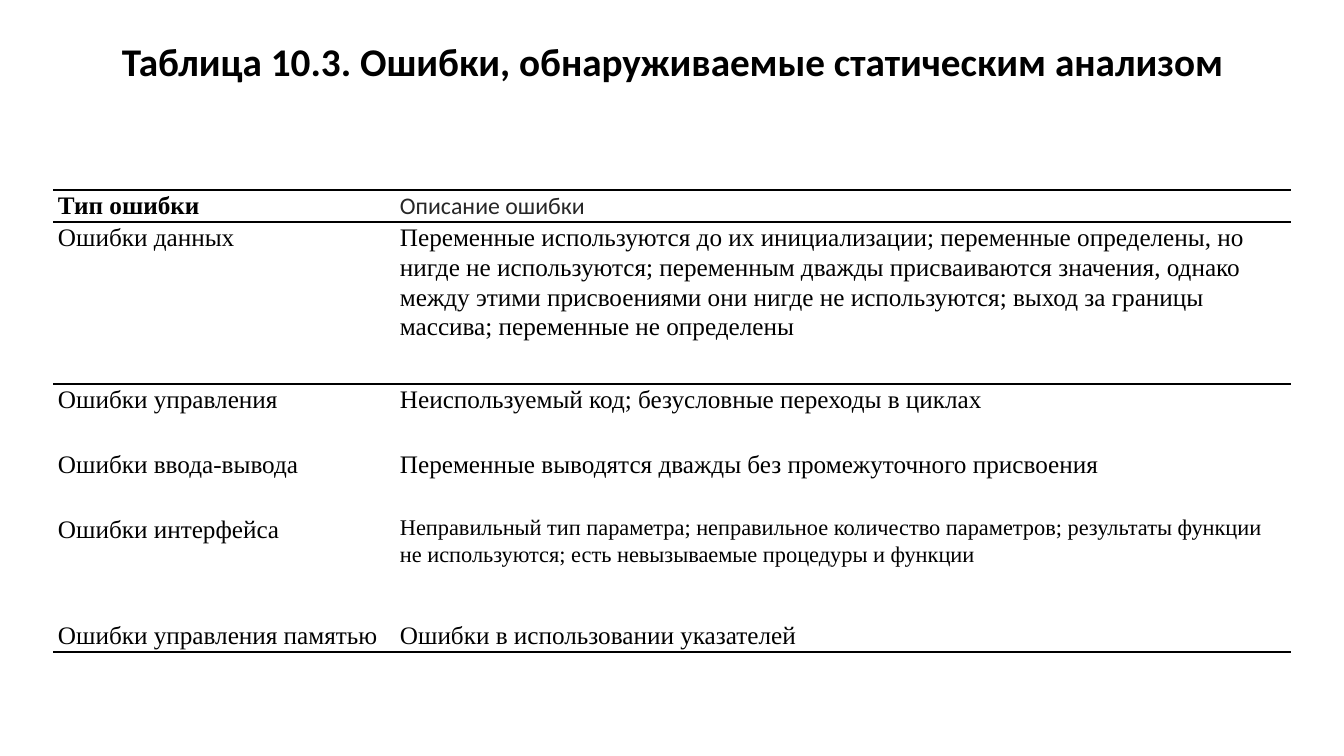
from lxml import etree
from pptx import Presentation
from pptx.dml.color import RGBColor
from pptx.enum.text import MSO_ANCHOR, MSO_AUTO_SIZE, PP_ALIGN
from pptx.oxml.ns import qn
from pptx.util import Pt

PX = 9144000 / 1008
TOP = MSO_ANCHOR.TOP
FIXED = MSO_AUTO_SIZE.NONE
CENTER, LEFT, JUSTIFY = PP_ALIGN.CENTER, PP_ALIGN.LEFT, PP_ALIGN.JUSTIFY
COLORS = {"ink": "000000", "gray": "272727", "paper": "FFFFFF"}
SERIF, SANS = "Times New Roman", "Calibri"
PLAIN = "{2D5ABB26-0587-4C30-8999-92F81FD0307C}"


def px(n):
    return round(n * PX)


def write(par, text, size, font=SERIF, bold=False, color="ink"):
    run = par.add_run()
    run.text = text
    run.font.size = Pt(size)
    run.font.name = font
    run.font.bold = bold
    run.font.color.rgb = RGBColor.from_string(COLORS[color])


prs = Presentation()
prs.slide_width, prs.slide_height = px(1344), px(756)
slide = prs.slides.add_slide(prs.slide_layouts[5])

title = slide.shapes.title
title.left, title.top, title.width, title.height = px(93), px(41), px(1159), px(48)
frame = title.text_frame
frame.auto_size = FIXED
frame.word_wrap = True
frame.vertical_anchor = TOP
par = frame.paragraphs[0]
par.alignment = CENTER
par.line_spacing = 0.8
write(par, "Таблица 10.3. Ошибки, обнаруживаемые статическим анализом", 28, SANS, True)

rows = [
    ("Тип ошибки", "Описание ошибки"),
    ("Ошибки данных",
     "Переменные используются до их инициализации; переменные определены, но "
     "нигде не используются; переменным дважды присваиваются значения, однако "
     "между этими присвоениями они нигде не используются; выход за границы "
     "массива; переменные не определены"),
    ("Ошибки управления", "Неиспользуемый код; безусловные переходы в циклах"),
    ("Ошибки ввода-вывода",
     "Переменные выводятся дважды без промежуточного присвоения"),
    ("Ошибки интерфейса",
     "Неправильный тип параметра; неправильное количество параметров; результаты "
     "функции не используются; есть невызываемые процедуры и функции"),
    ("Ошибки управления памятью", "Ошибки в использовании указателей"),
]
widths = [342, 896]
heights = [32, 162, 65, 65, 106, 32]
styles = {
    (0, 0): {"size": 18, "bold": True},
    (0, 1): {"size": 17, "font": SANS, "color": "gray"},
    (4, 1): {"size": 16},
}
rules = {0: ("lnT", "lnB"), 1: ("lnT",), len(rows) - 1: ("lnB",)}

table = slide.shapes.add_table(
    len(rows), len(widths), px(53), px(190), px(sum(widths)), px(sum(heights))).table
table.first_row = table.horz_banding = False
table._tbl.tblPr.find(qn("a:tableStyleId")).text = PLAIN
for col, width in zip(table.columns, widths):
    col.width = px(width)

for r, texts in enumerate(rows):
    table.rows[r].height = px(heights[r])
    for c, text in enumerate(texts):
        cell = table.cell(r, c)
        cell.margin_left = cell.margin_right = px(5)
        cell.margin_top = cell.margin_bottom = 0
        cell.vertical_anchor = TOP
        par = cell.text_frame.paragraphs[0]
        par.alignment = JUSTIFY if (r, c) == (0, 0) else LEFT
        par.line_spacing = 1.07
        if (r, c) == (0, 1):
            par.space_before = Pt(2)
        write(par, text, **styles.get((r, c), {"size": 18}))

        props = cell._tc.get_or_add_tcPr()
        for side in rules.get(r, ()):
            line = etree.SubElement(props, qn("a:" + side), w=str(Pt(1)))
            fill = etree.SubElement(line, qn("a:solidFill"))
            etree.SubElement(fill, qn("a:srgbClr"), val=COLORS["ink"])
        cell.fill.solid()
        cell.fill.fore_color.rgb = RGBColor.from_string(COLORS["paper"])

prs.save("out.pptx")
